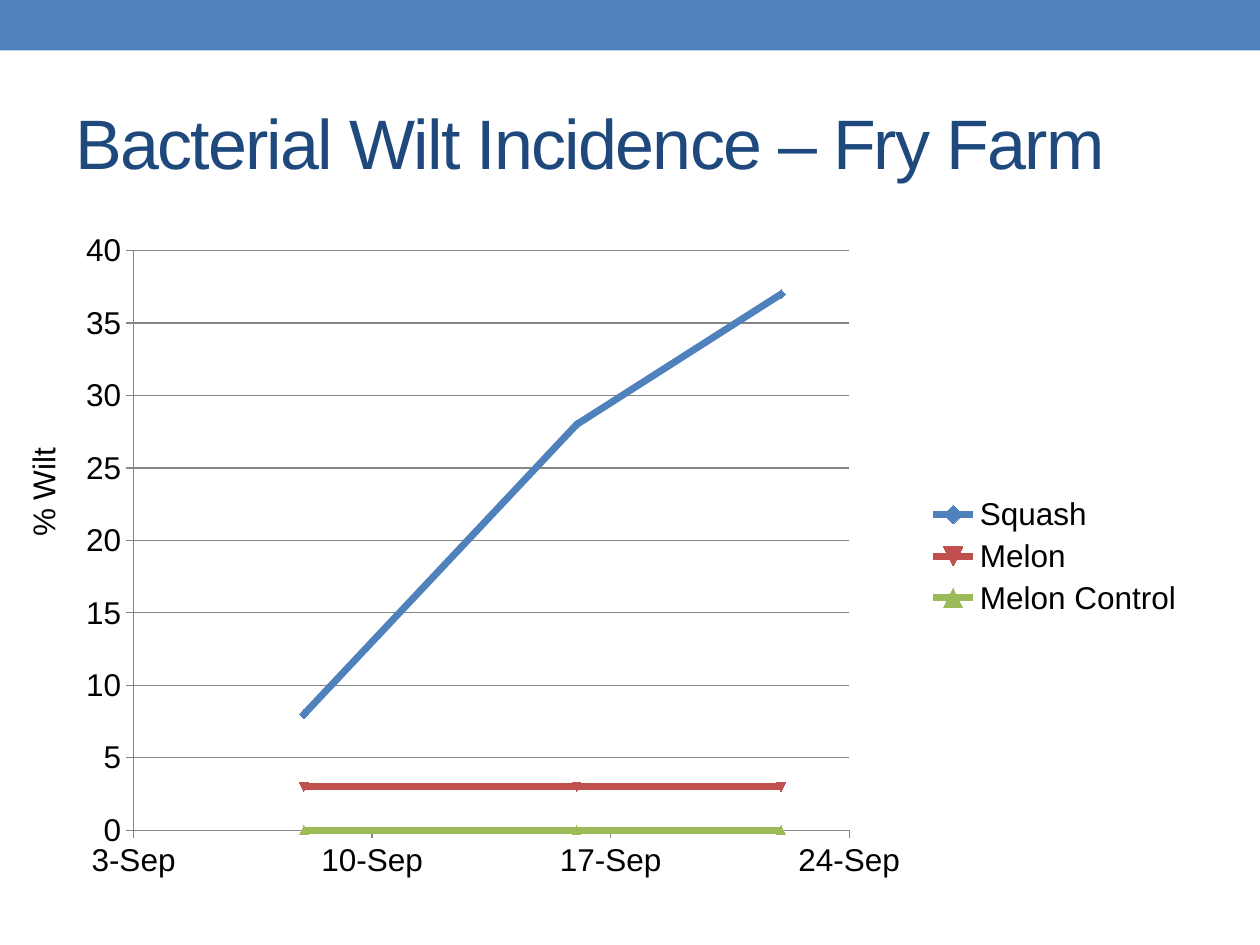
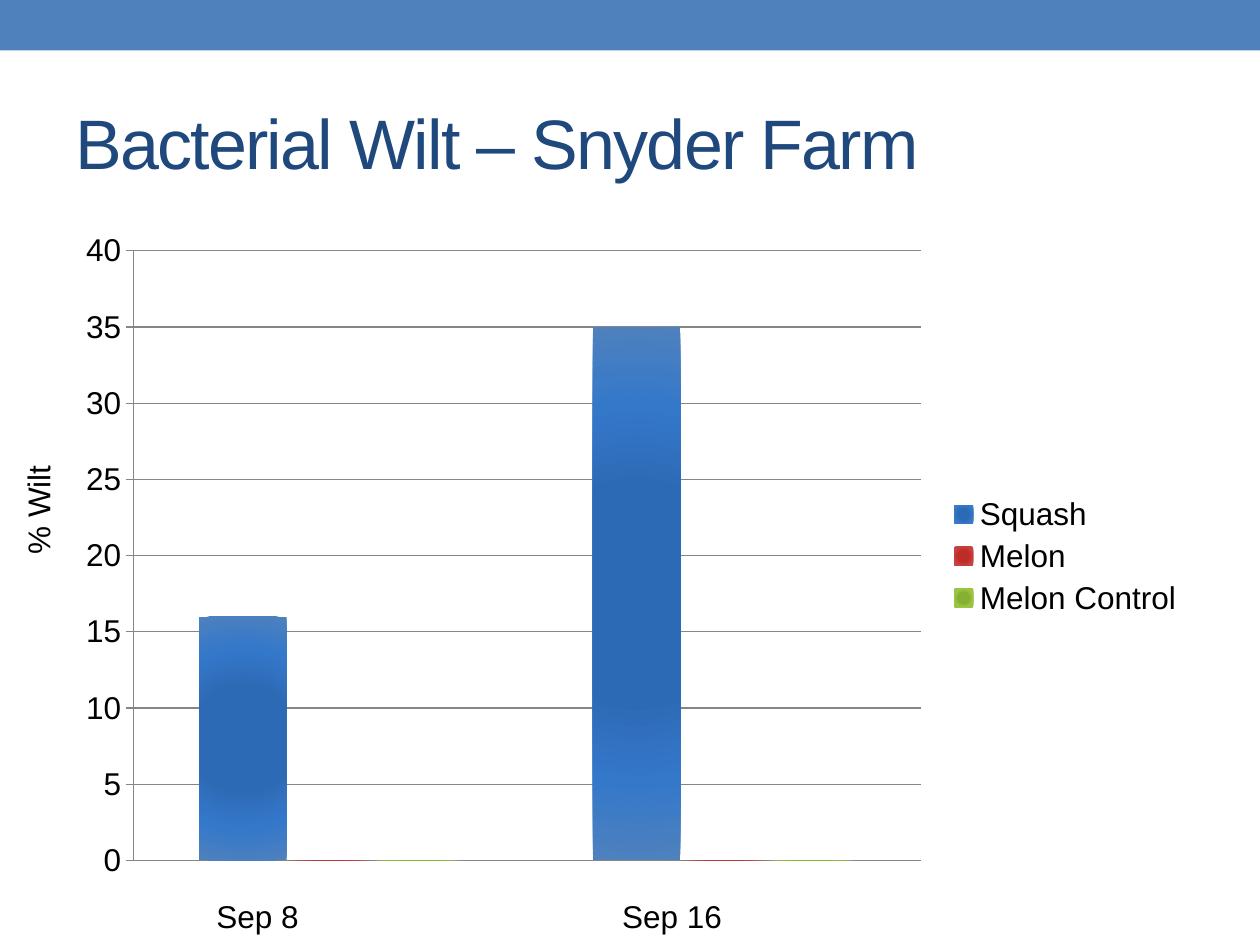
"""Builds two slides charting bacterial wilt incidence on two farms."""
from lxml.etree import SubElement
from pptx import Presentation
from pptx.chart.data import CategoryChartData, XyChartData
from pptx.dml.color import RGBColor
from pptx.enum.chart import XL_CHART_TYPE, XL_LEGEND_POSITION, XL_MARKER_STYLE, XL_TICK_MARK
from pptx.enum.shapes import MSO_SHAPE
from pptx.enum.text import MSO_ANCHOR
from pptx.oxml import parse_xml
from pptx.oxml.ns import nsdecls, qn
from pptx.util import Inches, Pt

BAND_BLUE = RGBColor(0x4F, 0x81, 0xBD)
TITLE_BLUE = RGBColor(0x1F, 0x49, 0x7D)
BLACK = RGBColor(0, 0, 0)
AXIS_GREY = RGBColor(0x86, 0x86, 0x86)
SERIES_COLORS = [BAND_BLUE, RGBColor(0xC0, 0x50, 0x4D), RGBColor(0x9B, 0xBB, 0x59)]
BAR_SHADES = [
    (RGBColor(0x2D, 0x6A, 0xB6), RGBColor(0x34, 0x78, 0xCA)),
    (RGBColor(0xBC, 0x2D, 0x29), RGBColor(0xCB, 0x3D, 0x3A)),
    (RGBColor(0x85, 0xB0, 0x33), RGBColor(0x9B, 0xC8, 0x3F)),
]
MARKERS = [XL_MARKER_STYLE.DIAMOND, XL_MARKER_STYLE.AUTOMATIC, XL_MARKER_STYLE.TRIANGLE]
FONT = "Arial"
CHART_LEFT, CHART_TOP, CHART_WIDTH, CHART_HEIGHT = 0.5, 1.75, 9, 5.33
PLOT_LEFT, PLOT_TOP = 0.56, 0.24
SERIES_NAMES = ["Squash", "Melon", "Melon Control"]

SEP_3, SEP_8, SEP_16, SEP_22, SEP_24 = 41155, 41160, 41168, 41174, 41176
FRY_WILT = [(8, 28, 37), (3, 3, 3), (0, 0, 0)]
SNYDER_WILT = [(16, 35), (0, 0), (0, 0)]


def add_text(slide, text, left, top, width, height, size=18, color=BLACK):
    box = slide.shapes.add_textbox(Inches(left), Inches(top), Inches(width), Inches(height))
    box.text_frame.text = text
    run = box.text_frame.paragraphs[0].runs[0]
    run.font.name = FONT
    run.font.size = Pt(size)
    run.font.color.rgb = color
    return box


def add_wilt_chart(slide, chart_type, chart_data, plot_width, plot_height):
    chart = slide.shapes.add_chart(
        chart_type, Inches(CHART_LEFT), Inches(CHART_TOP),
        Inches(CHART_WIDTH), Inches(CHART_HEIGHT), chart_data
    ).chart
    chart.has_title = False
    chart.font.name = FONT
    chart.font.size = Pt(18)
    chart.font.color.rgb = BLACK
    chart.has_legend = True
    chart.legend.position = XL_LEGEND_POSITION.RIGHT
    chart.legend.include_in_layout = False
    chart.plots[0].vary_by_categories = False

    chart.category_axis.has_major_gridlines = False
    value_axis = chart.value_axis
    value_axis.minimum_scale, value_axis.maximum_scale, value_axis.major_unit = 0, 40, 5
    value_axis.has_major_gridlines = True
    value_axis.major_gridlines.format.line.color.rgb = AXIS_GREY
    for axis in (chart.category_axis, value_axis):
        axis.major_tick_mark = XL_TICK_MARK.OUTSIDE
        axis.minor_tick_mark = XL_TICK_MARK.NONE
        axis.format.line.color.rgb = AXIS_GREY

    plot_area = chart.element.xpath("c:chart/c:plotArea")[0]
    for old_layout in plot_area.findall(qn("c:layout")):
        plot_area.remove(old_layout)
    layout = parse_xml(f"<c:layout {nsdecls('c')}><c:manualLayout/></c:layout>")
    settings = [("layoutTarget", "inner"), ("xMode", "edge"), ("yMode", "edge"),
                ("x", PLOT_LEFT / CHART_WIDTH), ("y", PLOT_TOP / CHART_HEIGHT),
                ("w", plot_width / CHART_WIDTH), ("h", plot_height / CHART_HEIGHT)]
    for name, value in settings:
        SubElement(layout[0], qn(f"c:{name}")).set("val", str(value))
    plot_area.insert(0, layout)
    return chart


presentation = Presentation()
presentation.slide_width = Inches(10)
presentation.slide_height = Inches(7.5)

slides = []
for title, label_left, label_top in [
    ("Bacterial Wilt Incidence – Fry Farm", -0.12, 3.7),
    ("Bacterial Wilt – Snyder Farm", -0.16, 3.84),
]:
    slide = presentation.slides.add_slide(presentation.slide_layouts[6])
    slides.append(slide)
    band = slide.shapes.add_shape(MSO_SHAPE.RECTANGLE, 0, 0, Inches(10), Inches(0.4))
    band.shadow.inherit = False
    band.fill.solid()
    band.fill.fore_color.rgb = BAND_BLUE
    band.line.fill.background()

    title_box = add_text(slide, title, 0.5, 0.58, 9, 1.08, 40, TITLE_BLUE)
    title_box.text_frame.word_wrap = True
    title_box.text_frame.vertical_anchor = MSO_ANCHOR.MIDDLE
    title_box.text_frame.paragraphs[0].runs[0].font._element.set("spc", "-100")

    axis_label = add_text(slide, "% Wilt", label_left, label_top, 0.92, 0.4)
    axis_label.text_frame.word_wrap = False
    axis_label.rotation = 270

fry_slide, snyder_slide = slides

fry_data = XyChartData()
for name, wilt in zip(SERIES_NAMES, FRY_WILT):
    points = fry_data.add_series(name)
    for date, percent in zip((SEP_8, SEP_16, SEP_22), wilt):
        points.add_data_point(date, percent)
fry_chart = add_wilt_chart(fry_slide, XL_CHART_TYPE.XY_SCATTER_LINES, fry_data, 5.68, 4.6)
date_axis = fry_chart.category_axis
date_axis.minimum_scale, date_axis.maximum_scale, date_axis.major_unit = SEP_3, SEP_24, 7
date_axis.tick_labels.number_format = "d-mmm"
date_axis.tick_labels.number_format_is_linked = False
for series, color, marker in zip(fry_chart.plots[0].series, SERIES_COLORS, MARKERS):
    series.smooth = False
    series.format.line.color.rgb = color
    series.format.line.width = Pt(4)
    series.marker.style = marker
    series.marker.size = 5
    series.marker.format.fill.solid()
    series.marker.format.fill.fore_color.rgb = color
    series.marker.format.line.color.rgb = color

snyder_data = CategoryChartData()
snyder_data.categories = ["1", "2"]
for name, wilt in zip(SERIES_NAMES, SNYDER_WILT):
    snyder_data.add_series(name, wilt)
snyder_chart = add_wilt_chart(
    snyder_slide, XL_CHART_TYPE.COLUMN_CLUSTERED, snyder_data, 6.25, 4.84
)
snyder_chart.category_axis.visible = False
snyder_chart.plots[0].gap_width = 150
snyder_chart.plots[0].overlap = 0
for series, edge, (center, middle) in zip(snyder_chart.plots[0].series, SERIES_COLORS, BAR_SHADES):
    stops = "".join(
        f'<a:gs pos="{position}"><a:srgbClr val="{color}"/></a:gs>'
        for position, color in [(0, center), (40000, center), (70000, middle), (100000, edge)]
    )
    gradient = parse_xml(
        f'<a:gradFill {nsdecls("a")}><a:gsLst>{stops}</a:gsLst><a:path path="circle">'
        '<a:fillToRect l="50000" t="50000" r="50000" b="50000"/></a:path></a:gradFill>'
    )
    series.format.line.fill.background()
    series.format.line._get_or_add_ln().getparent().insert(0, gradient)

for date_index, date_text in enumerate(["Sep 8", "Sep 16"]):
    add_text(snyder_slide, date_text, 1.62 + 3.22 * date_index, 7.07, 1.2, 0.4)

presentation.save("out.pptx")
